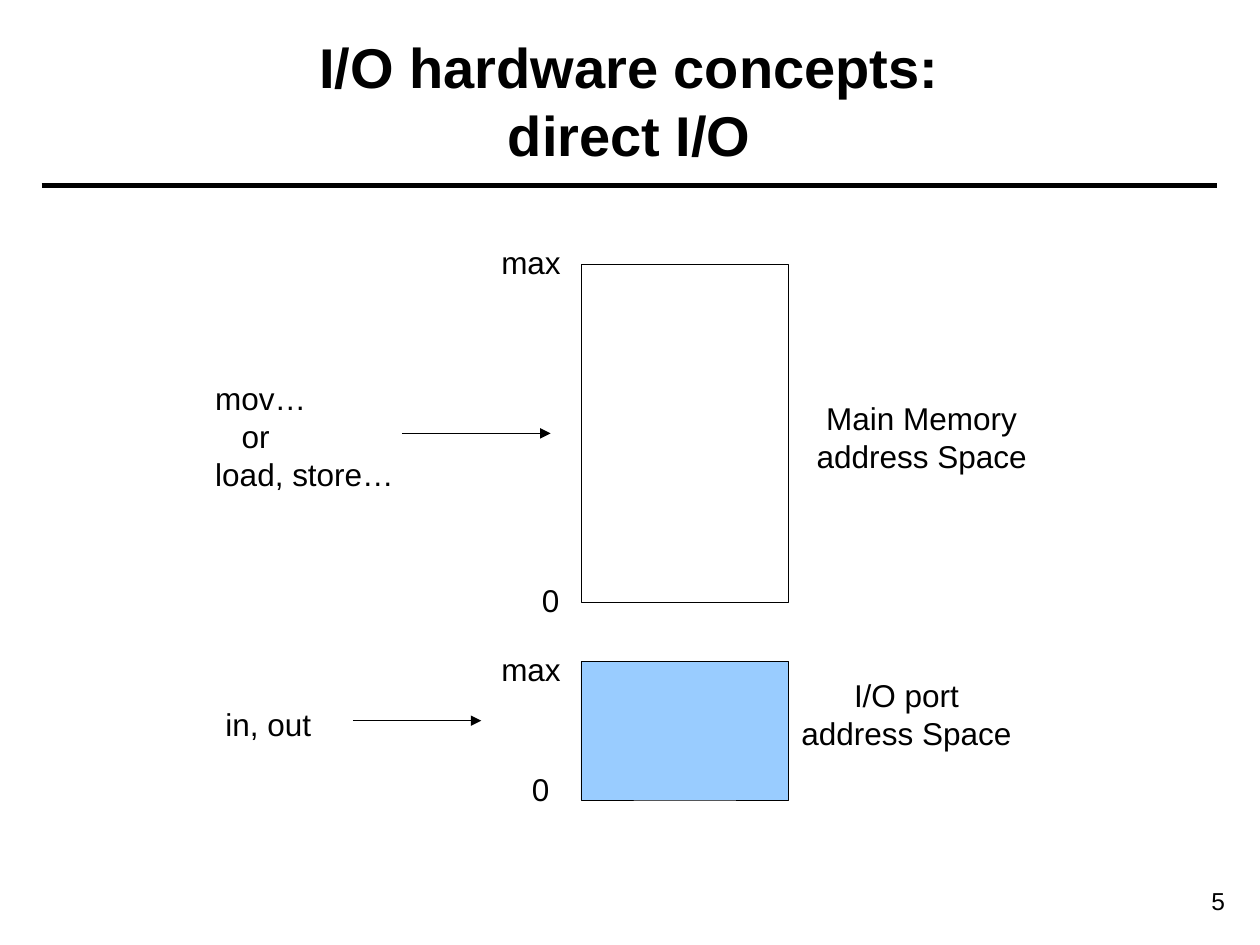
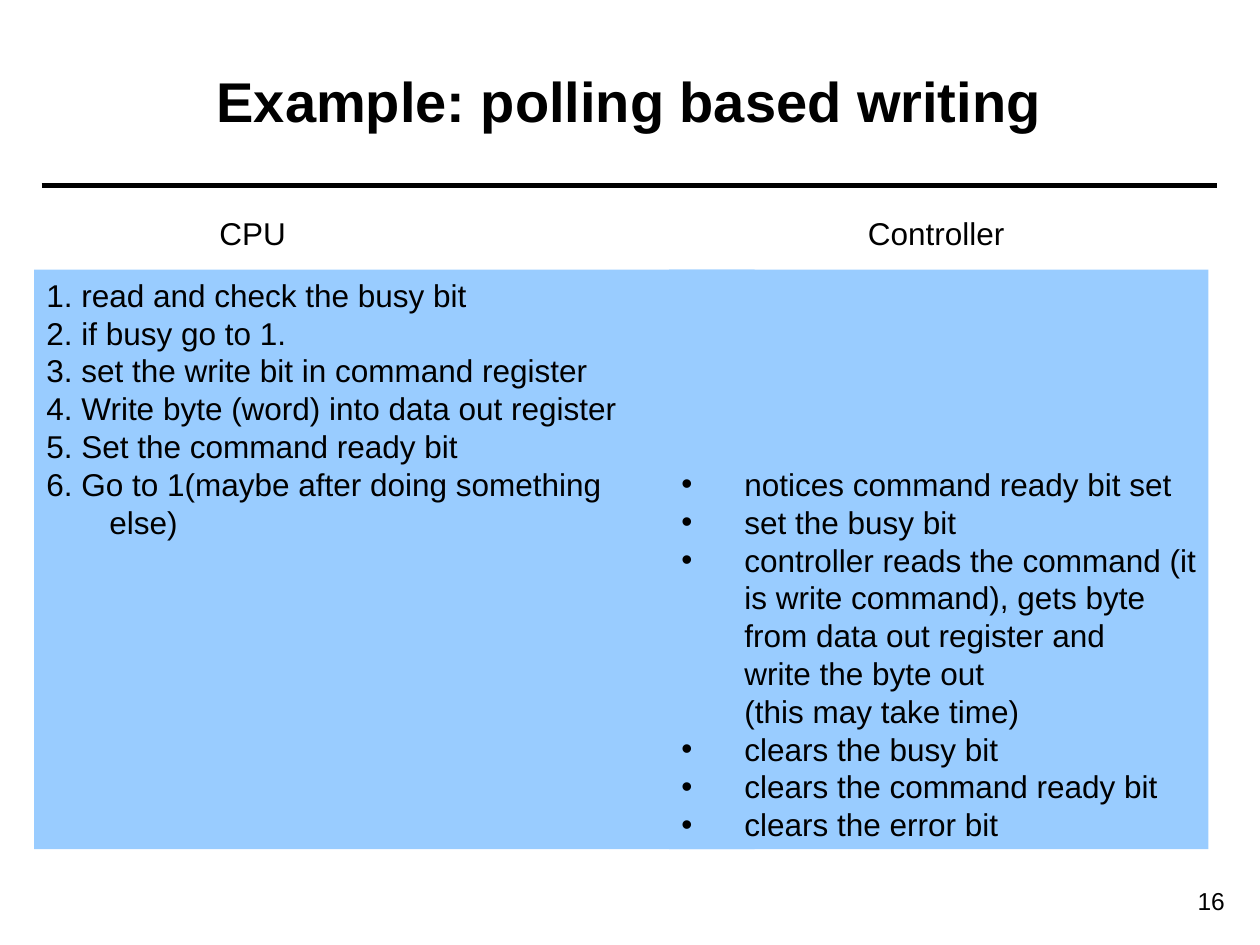
import pptx
import pptx.util
import pptx.dml.color
import pptx.enum.shapes
import pptx.enum.text
import pptx.oxml
import pptx.oxml.ns
from lxml import etree

PX = 9144  # EMU per px, 100 px to the inch
FONT = "Arial"
COLORS = {"ink": "000000", "panel": "99CCFF"}
ALIGN = pptx.enum.text.PP_ALIGN
ANCHOR = pptx.enum.text.MSO_ANCHOR
qn = pptx.oxml.ns.qn


def px(*lengths):
    return [pptx.util.Emu(n * PX) for n in lengths]


def rgb(name):
    return pptx.dml.color.RGBColor.from_string(COLORS[name])


# ---- Shared parts ----
def write(tf, paragraphs, size=18, align=ALIGN.LEFT, bold=False):
    """Fill a text frame; a newline inside a paragraph is a line break."""
    for i, text in enumerate(paragraphs):
        p = tf.paragraphs[0] if i == 0 else tf.add_paragraph()
        p.alignment = align
        for j, line in enumerate(text.split("\n")):
            if j:
                p.add_line_break()
            r = p.add_run()
            r.text = line
            r.font.name = FONT
            r.font.size = pptx.util.Pt(size)
            r.font.bold = bold
            r.font.color.rgb = rgb("ink")


def add_text(s, box, paragraphs, size=18, align=ALIGN.CENTER):
    sp = s.shapes.add_textbox(*px(*box))
    sp.text_frame.word_wrap = True
    write(sp.text_frame, paragraphs, size, align)
    return sp


def add_rect(s, box, fill=None, outline=None):
    sp = s.shapes.add_shape(pptx.enum.shapes.MSO_SHAPE.RECTANGLE, *px(*box))
    sp.shadow.inherit = False
    if fill:
        sp.fill.solid()
        sp.fill.fore_color.rgb = rgb(fill)
    else:
        sp.fill.background()
    if outline:
        sp.line.color.rgb = rgb("ink")
        sp.line.width = pptx.util.Pt(outline)
    else:
        sp.line.fill.background()
    return sp


def add_line(s, x1, x2, y, width, arrow=False):
    sp = s.shapes.add_connector(
        pptx.enum.shapes.MSO_CONNECTOR.STRAIGHT, *px(x1, y, x2, y))
    sp.line.color.rgb = rgb("ink")
    sp.line.width = pptx.util.Pt(width)
    if arrow:
        ln = sp.line._get_or_add_ln()
        etree.SubElement(ln, qn("a:tailEnd"), type="triangle")
    etree.SubElement(sp._element.spPr, qn("a:effectLst"))


def add_slide(prs, title, number):
    """Title, rule and page number."""
    s = prs.slides.add_slide(prs.slide_layouts[5])
    sp = s.shapes.title
    sp.left, sp.top, sp.width, sp.height = px(35, 17, 929, 125)
    tf = sp.text_frame
    tf.auto_size = pptx.enum.text.MSO_AUTO_SIZE.NONE
    tf.vertical_anchor = ANCHOR.MIDDLE
    write(tf, [title], 32, ALIGN.CENTER, bold=True)
    add_line(s, 33, 966, 147, 3)
    add_text(s, (878, 698, 104, 34), [str(number)], 14, ALIGN.RIGHT)
    return s


# ---- Address spaces ----
def address_space(s, box, name, name_at, max_at, zero_at, fill=None):
    """A memory block; the labels are offset from its top left corner."""
    x, y = box[:2]
    add_rect(s, box, fill, outline=0.25)
    for text, (dx, dy), (w, h) in (
            (name, name_at, (197, 70)),
            ("max", max_at, (77, 40)),
            ("0", zero_at, (44, 40))):
        add_text(s, (x + dx, y + dy, w, h), [text])


def instructions(s, box, lines, arrow):
    """Instruction names and the arrow (x1, x2, y) offset from their box."""
    x, y = box[:2]
    sp = add_text(s, box, lines, align=ALIGN.LEFT)
    x1, x2, dy = arrow
    add_line(s, x + x1, x + x2, y + dy, 0.25, arrow=True)
    return sp


def direct_io_slide(prs):
    s = add_slide(prs, "I/O hardware concepts:\ndirect I/O", 5)
    address_space(s, (461, 210, 165, 268), "Main Memory\naddress Space",
                  (172, 102), (-78, -22), (-46, 246))
    address_space(s, (461, 525, 165, 110), "I/O port\naddress Space",
                  (160, 7), (-78, -14), (-54, 81), fill="panel")
    sp = instructions(s, (161, 296, 171, 100), ["mov…", "or", "load, store…"],
                      (158, 276, 48))
    sp.text_frame.paragraphs[1]._p.get_or_add_pPr().set("marL", str(21 * PX))
    instructions(s, (169, 555, 98, 40), ["in, out"], (111, 213, 17))


# ---- Polling steps ----
def steps_panel(s, box, steps, anchor, bullets=False):
    """A filled panel of steps with hanging indents."""
    sp = add_rect(s, box, fill="panel")
    tf = sp.text_frame
    tf.word_wrap = True
    tf.margin_right = 0
    tf.vertical_anchor = anchor
    write(tf, steps)
    for p in tf.paragraphs:
        pPr = p._p.get_or_add_pPr()
        pPr.set("marL", str(50 * PX))
        pPr.set("indent", str(-50 * PX))
        if bullets:
            clr = etree.SubElement(pPr, qn("a:buClr"))
            etree.SubElement(clr, qn("a:srgbClr"), val=COLORS["ink"])
            etree.SubElement(pPr, qn("a:buFont"), typeface=FONT)
            etree.SubElement(pPr, qn("a:buChar"), char="•")


def polling_slide(prs):
    s = add_slide(prs, "Example: polling based writing", 16)
    steps_panel(s, (27, 214, 572, 460), [
        "1. read and check the busy bit",
        "2. if busy go to 1.",
        "3. set the write bit in command register",
        "4. Write byte (word) into data out register",
        "5. Set the command ready bit",
        "6. Go to 1(maybe after doing something\nelse)",
    ], ANCHOR.TOP)
    # The controller starts once the CPU has set the ready bit
    steps_panel(s, (531, 214, 428, 460), [
        "notices command ready bit set",
        "set the busy bit",
        "controller reads the command (it\nis write command), gets byte\n"
        "from data out register and\nwrite the byte out\n(this may take time)",
        "clears the busy bit",
        "clears the command ready bit",
        "clears the error bit",
    ], ANCHOR.BOTTOM, bullets=True)
    # Column headings
    for heading, x, w in (("CPU", 159, 83), ("Controller", 674, 138)):
        add_text(s, (x, 165, w, 40), [heading])


def main():
    prs = pptx.Presentation()
    prs.slide_width, prs.slide_height = px(1000, 750)
    direct_io_slide(prs)
    polling_slide(prs)
    prs.save("out.pptx")


if __name__ == "__main__":
    main()
